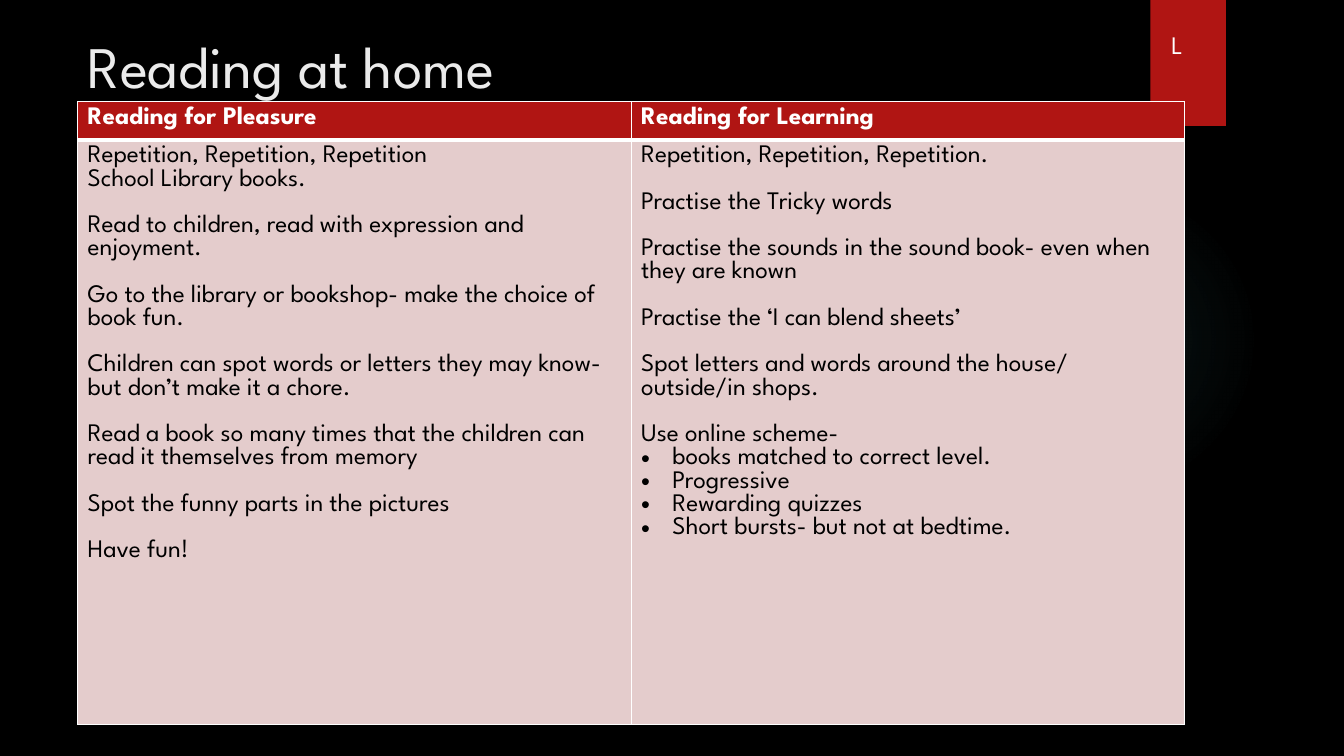
from lxml import etree
from pptx import Presentation, util as u
from pptx.dml.color import RGBColor
from pptx.enum import shapes, text
from pptx.oxml import parse_xml
from pptx.oxml.ns import qn

NS = 'xmlns:a="http://schemas.openxmlformats.org/drawingml/2006/main"'
PLEASURE = [
    ["Repetition, Repetition, Repetition", "School Library books."],
    ["Read to children, read with expression and enjoyment."],
    ["Go to the library or bookshop- make the choice of book fun."],
    ["Children can spot words or letters they may know- but don’t make it a chore."],
    ["Read a book so many times that the children can read it themselves from memory"],
    ["Spot the funny parts in the pictures"],
    ["Have fun!"],
]
LEARNING = [
    ["Repetition, Repetition, Repetition."],
    ["Practise the Tricky words"],
    ["Practise the sounds in the sound book- even when they are known"],
    ["Practise the ‘I can blend sheets’"],
    ["Spot letters and words around the house/ outside/in shops."],
    ["Use online scheme-"],
]
SCHEME = ["books matched to correct level.", "Progressive",
          "Rewarding quizzes", "Short bursts- but not at bedtime."]


def color(code):
    return RGBColor.from_string(code)


class Deck:
    face = "League Spartan"
    red, white, black = "B01513", "FFFFFF", "000000"
    pink, pale, glow = "E4CCCC", "EBEBEB", "50B9C1"
    size, gap = 18, 16.6

    def __init__(self):
        self.prs = Presentation()
        self.prs.slide_width = u.Inches(13.33)
        self.prs.slide_height = u.Inches(7.5)
        self.slide = self.prs.slides.add_slide(self.prs.slide_layouts[5])
        fill = self.slide.background.fill
        fill.solid()
        fill.fore_color.rgb = color(self.black)

    def style(self, para, code, size=size, bold=False):
        for run in para.runs:
            font = run.font
            font.name, font.size, font.bold = self.face, u.Pt(size), bold
            font.color.rgb = color(code)

    def title(self, words, *box):
        shape = self.slide.shapes.title
        shape.left, shape.top, shape.width, shape.height = map(u.Inches, box)
        frame = shape.text_frame
        frame.text = words
        frame.auto_size = text.MSO_AUTO_SIZE.NONE
        frame.vertical_anchor = text.MSO_ANCHOR.MIDDLE
        frame.margin_bottom = u.Inches(0.27)
        frame.paragraphs[0].alignment = text.PP_ALIGN.LEFT
        self.style(frame.paragraphs[0], self.pale, 42)

    def shape(self, kind, code, *box):
        item = self.slide.shapes.add_shape(kind, *map(u.Inches, box))
        item.shadow.inherit = False
        item.fill.solid()
        item.fill.fore_color.rgb = color(code)
        item.line.fill.background()
        return item

    def halo(self, *box):
        item = self.shape(shapes.MSO_SHAPE.OVAL, self.glow, *box)
        stops = "".join(
            f'<a:gs pos="{pos}000"><a:srgbClr val="{self.glow}">'
            f'<a:alpha val="{alpha}000"/></a:srgbClr></a:gs>'
            for pos, alpha in ((0, 7), (36, 6), (69, 0), (100, 0)))
        grad = parse_xml(
            f'<a:gradFill {NS}><a:gsLst>{stops}</a:gsLst><a:path path="circle">'
            '<a:fillToRect l="50000" t="50000" r="50000" b="50000"/>'
            '</a:path></a:gradFill>')
        props = item.fill._xPr
        props.replace(props.find(qn("a:solidFill")), grad)

    def label(self, words, *box):
        item = self.slide.shapes.add_textbox(*map(u.Inches, box))
        frame = item.text_frame
        frame.word_wrap = True
        frame.text = words
        self.style(frame.paragraphs[0], self.white)

    def grid(self, widths, heights, *box):
        frame = self.slide.shapes.add_table(
            len(heights), len(widths), *map(u.Inches, box))
        table = frame.table
        for col, width in zip(table.columns, widths):
            col.width = u.Inches(width)
        for row, height in zip(table.rows, heights):
            row.height = u.Inches(height)
        return table

    def cell(self, cell, code, **edges):
        cell.fill.solid()
        cell.fill.fore_color.rgb = color(code)
        props = cell._tc.get_or_add_tcPr()
        for spot, side in enumerate("LRTB"):
            width = u.Pt(edges.get(side, 1))
            props.insert(spot, parse_xml(
                f'<a:ln{side} {NS} w="{width}"><a:solidFill>'
                f'<a:srgbClr val="{self.white}"/></a:solidFill></a:ln{side}>'))

    def head(self, cell, words):
        self.cell(cell, self.red, B=3)
        cell.text_frame.text = words
        self.style(cell.text_frame.paragraphs[0], self.white, bold=True)

    def body(self, cell, groups, points=()):
        self.cell(cell, self.pink, T=3)
        frame = cell.text_frame
        lines = [line for group in groups for line in group]
        starts = [group[0] for group in groups[1:]]
        frame.text = "\n".join([*lines, *points])
        for para in frame.paragraphs:
            if para.text in points:
                self.bullet(para)
            if para.text in starts:
                para.space_before = u.Pt(self.gap)
            self.style(para, self.black)

    def bullet(self, para):
        props = para._p.get_or_add_pPr()
        inset = u.Inches(0.31)
        props.set("marL", str(inset))
        props.set("indent", str(-inset))
        etree.SubElement(props, qn("a:buFont"), typeface="Arial")
        etree.SubElement(props, qn("a:buChar"), char="•")


def main():
    deck = Deck()
    deck.halo(9.41, 1.83, 3.08, 3.08)
    deck.shape(shapes.MSO_SHAPE.RECTANGLE, deck.red, 11.41, 0, 0.75, 1.25)
    deck.title("Reading at home", 0.77, 0.24, 6.31, 1.02)
    table = deck.grid([5.49, 5.49], [0.38, 5.8], 0.77, 1.01, 10.98, 6.18)
    deck.head(table.cell(0, 0), "Reading for Pleasure")
    deck.head(table.cell(0, 1), "Reading for Learning")
    deck.body(table.cell(1, 0), PLEASURE)
    deck.body(table.cell(1, 1), LEARNING, SCHEME)
    deck.label("L", 11.52, 0.24, 0.48, 0.4)
    deck.prs.save("out.pptx")


if __name__ == "__main__":
    main()
